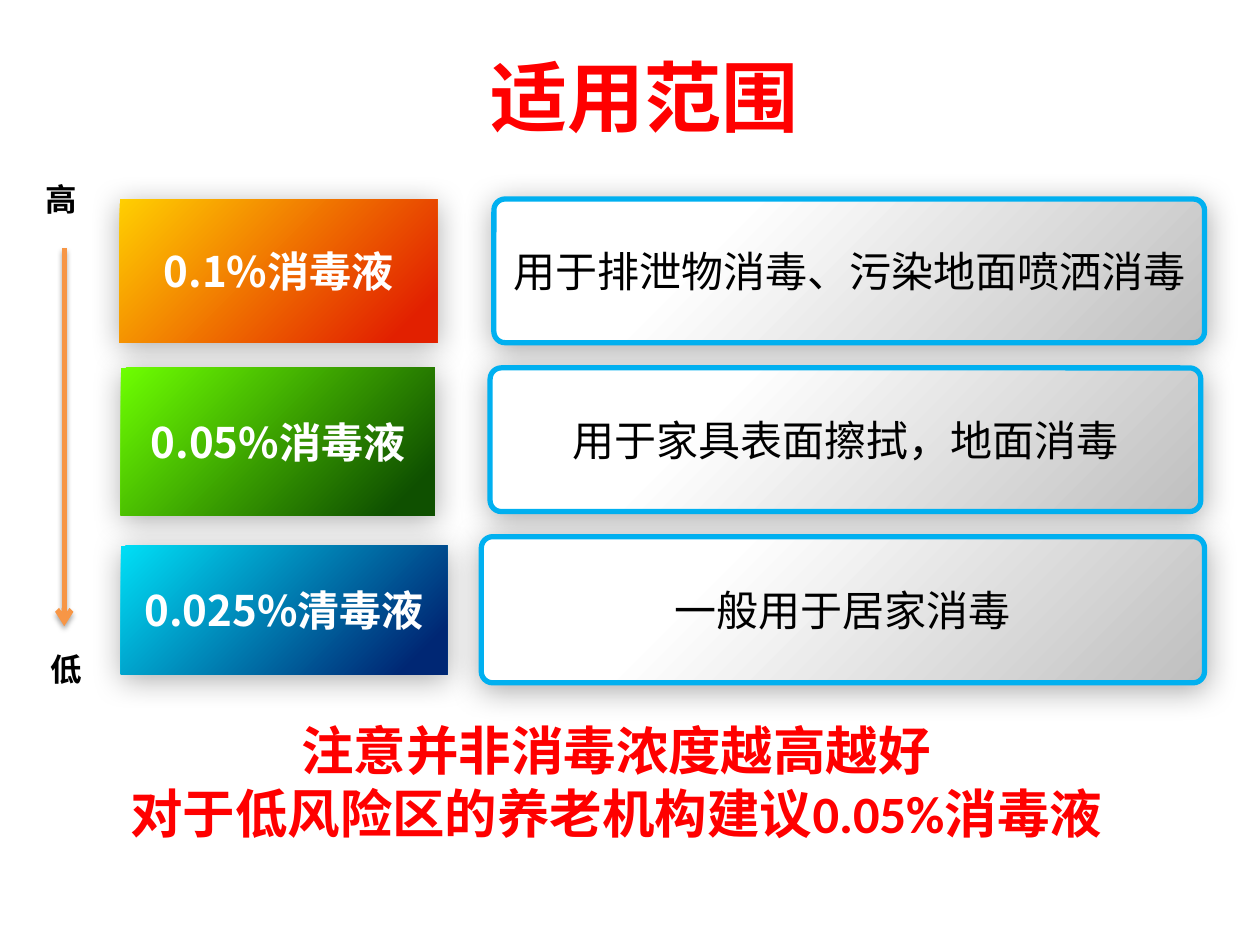
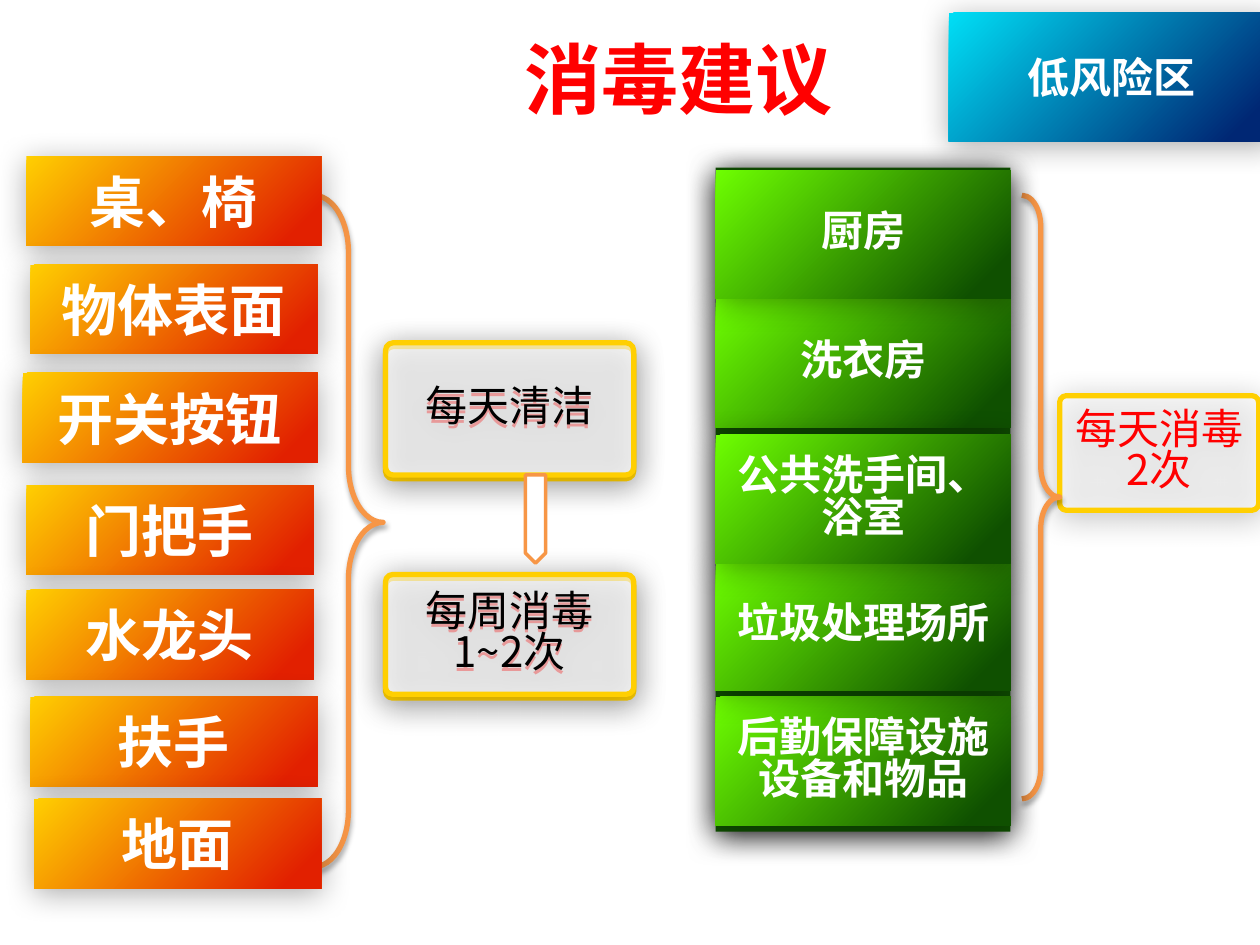
from lxml.etree import SubElement
from pptx import Presentation
from pptx.dml.color import RGBColor
from pptx.enum.shapes import MSO_CONNECTOR, MSO_SHAPE
from pptx.enum.text import MSO_ANCHOR, PP_ALIGN
from pptx.oxml.ns import qn
from pptx.util import Inches, Pt

CJK = "Noto Sans CJK SC"
RED, WHITE, BLACK = "FF0000", "FFFFFF", "000000"
ORANGE, BLUE, YELLOW = "F79646", "00B0F0", "FFCF01"
# Gradient stops: (position, colour)
FIRE = [(0, "FFCF01"), (0.9, "E22000")]
LEAF = [(0, "6EFF01"), (0.9, "0F5000")]
SEA = [(0, "00DFF6"), (0.9, "002774")]
SILVER = [(0.3, "FFFFFF"), (1, "BFBFBF")]
# Shadows: blur pt, distance pt, angle, opacity %
SOFT = (17.8, 3, 87, 33)
DEEP = (17.8, 3, 87, 85)
THIN = (3.1, 1.8, 90, 35)

# Solution, gradient, solution box, use, use box
STRENGTHS = [
    ("0.1%消毒液", FIRE, (0.95, 1.58, 2.52, 1.14),
     "用于排泄物消毒、污染地面喷洒消毒", (3.92, 1.58, 5.64, 1.14)),
    ("0.05%消毒液", LEAF, (0.96, 2.92, 2.49, 1.17),
     "用于家具表面擦拭，地面消毒", (3.89, 2.92, 5.64, 1.14)),
    ("0.025%清毒液", SEA, (0.96, 4.33, 2.59, 1.02),
     "一般用于居家消毒", (3.82, 4.26, 5.74, 1.16)),
]
SCALE_ENDS = [("高", 0.26, 1.38), ("低", 0.3, 5.11)]
ADVICE = ["注意并非消毒浓度越高越好", "对于低风险区的养老机构建议0.05%消毒液"]

# Surface, left, top, width
SURFACES = [
    ("桌、椅", 0.21, 1.24, 2.34),
    ("物体表面", 0.24, 2.1, 2.28),
    ("开关按钮", 0.18, 2.96, 2.34),
    ("门把手", 0.21, 3.85, 2.28),
    ("水龙头", 0.21, 4.68, 2.28),
    ("扶手", 0.24, 5.53, 2.28),
    ("地面", 0.27, 6.34, 2.28),
]
ROOMS = [
    ("后勤保障设施设备和物品", 5.53),
    ("垃圾处理场所", 4.46),
    ("洗衣房", 2.37),
    ("厨房", 1.35),
    ("公共洗手间、浴室", 3.45),
]
ROUTINES = [("每天清洁", 2.72, 1.05), ("每周消毒1~2次", 4.56, 0.95)]
ECHO_DROP = 0.03
# Box, adjustments
BRACES = [
    ((2.49, 1.55, 0.55, 5.33), (0.817, 0.513)),
    ((8.11, 1.55, 0.3, 4.79), (0.817, 0.5)),
]


def color(hex_code):
    return RGBColor.from_string(hex_code)


def inches(box):
    return [Inches(value) for value in box]


def write(holder, text, *, size=24, font=CJK, ink=BLACK, bold=False,
          align=PP_ALIGN.CENTER, anchor=MSO_ANCHOR.MIDDLE, spacing=None):
    """Fill a shape or text box with a line of text or a list of lines."""
    frame = holder.text_frame
    frame.word_wrap = True
    frame.vertical_anchor = anchor
    for index, line in enumerate([text] if isinstance(text, str) else text):
        paragraph = frame.add_paragraph() if index else frame.paragraphs[0]
        paragraph.alignment = align
        if spacing:
            paragraph.line_spacing = spacing
        run = paragraph.add_run()
        run.text = line
        run.font.size = Pt(size)
        run.font.name = font
        run.font.bold = bold
        run.font.color.rgb = color(ink)
        SubElement(run.font._element, qn("a:ea")).set("typeface", font)


def cast_shadow(effects, shadow):
    blur, distance, angle, opacity = shadow
    outer = SubElement(effects, qn("a:outerShdw"), blurRad=str(Pt(blur)),
                       dist=str(Pt(distance)), dir=str(angle * 60000),
                       algn="ctr", rotWithShape="0")
    shade = SubElement(outer, qn("a:srgbClr"), val=BLACK)
    SubElement(shade, qn("a:alpha"), val=str(opacity * 1000))


def add_block(slide, kind, box, *, fill=None, opacity=None, line=None,
              weight=3, shadow=None, adjust=(), rotation=0):
    """Add a preset shape; fill is a colour, a list of gradient stops or None."""
    block = slide.shapes.add_shape(kind, *inches(box))
    block.rotation = rotation
    for index, value in enumerate(adjust):
        block.adjustments[index] = value
    if fill is None:
        block.fill.background()
    elif isinstance(fill, str):
        block.fill.solid()
        block.fill.fore_color.rgb = color(fill)
        if opacity:
            tint = block._element.spPr.find(qn("a:solidFill"))[0]
            SubElement(tint, qn("a:alpha"), val=str(opacity * 1000))
    else:
        block.fill.gradient()
        block.fill.gradient_angle = 315
        for stop, (position, tone) in zip(block.fill.gradient_stops, fill):
            stop.position = position
            stop.color.rgb = color(tone)
    if line:
        block.line.color.rgb = color(line)
        block.line.width = Pt(weight)
    else:
        block.line.fill.background()
    block.shadow.inherit = False
    if shadow:
        cast_shadow(block._element.spPr.find(qn("a:effectLst")), shadow)
    return block


def add_label(slide, text, box, **text_format):
    write(slide.shapes.add_textbox(*inches(box)), text, **text_format)


def add_title(slide, text, box):
    add_label(slide, text, box, size=44, font="Calibri", ink=RED, bold=True)


def add_tile(slide, text, box, gradient, **text_format):
    tile = add_block(slide, MSO_SHAPE.RECTANGLE, box, fill=gradient, shadow=SOFT)
    write(tile, text, ink=WHITE, bold=True, **text_format)


def add_routine(slide, text, box, ink):
    card = add_block(slide, MSO_SHAPE.ROUNDED_RECTANGLE, box, fill=WHITE,
                     opacity=60, line=YELLOW, shadow=SOFT, adjust=[0.059])
    write(card, text, ink=ink, spacing=0.82)


def build_scope(slide):
    add_title(slide, "适用范围", (1.42, 0.3, 7.39, 0.92))
    for solution, gradient, solution_box, use, use_box in STRENGTHS:
        add_tile(slide, solution, solution_box, gradient)
        use_card = add_block(slide, MSO_SHAPE.ROUNDED_RECTANGLE, use_box,
                             fill=SILVER, line=BLUE, shadow=SOFT, adjust=[0.078])
        write(use_card, use)

    scale = slide.shapes.add_connector(
        MSO_CONNECTOR.STRAIGHT, *inches((0.51, 1.97, 0.51, 4.97)))
    scale.line.color.rgb = color(ORANGE)
    scale.line.width = Pt(3)
    SubElement(scale.line._get_or_add_ln(), qn("a:tailEnd"), type="arrow")
    cast_shadow(SubElement(scale._element.spPr, qn("a:effectLst")), THIN)
    for end, left, top in SCALE_ENDS:
        add_label(slide, end, (left, top, 0.5, 0.4), size=18, font="Arial",
                  bold=True, align=PP_ALIGN.LEFT, anchor=MSO_ANCHOR.TOP)
    add_label(slide, ADVICE, (0.09, 5.77, 9.6, 0.86), size=30, font="Calibri",
              ink=RED, bold=True)


def build_advice(slide):
    add_title(slide, "消毒建议", (1.29, -0.01, 8.2, 1.25))
    add_tile(slide, "低风险区", (7.53, 0.1, 2.58, 1.02), SEA)
    add_routine(slide, "每天消毒2次", (8.41, 3.14, 1.58, 0.91), RED)

    for drop, ink in [(ECHO_DROP, RED), (0, BLACK)]:
        for routine, top, height in ROUTINES:
            add_routine(slide, routine, (3.06, top + drop, 1.97, height), ink)
    add_block(slide, MSO_SHAPE.RIGHT_ARROW, (3.9, 4.04, 0.7, 0.16), fill=WHITE,
              line=ORANGE, weight=2, adjust=(1, 0.5), rotation=90)

    for box, bend in BRACES:
        add_block(slide, MSO_SHAPE.LEFT_BRACE, box, line=ORANGE, shadow=THIN,
                  adjust=bend, rotation=180)
    for surface, left, top, width in SURFACES:
        add_tile(slide, surface, (left, top, width, 0.71), FIRE, size=32)

    add_block(slide, MSO_SHAPE.RECTANGLE, (5.68, 1.33, 2.34, 5.27),
              fill="0F5000", shadow=DEEP)
    for room, top in ROOMS:
        add_tile(slide, room, (5.68, top, 2.34, 1.02), LEAF, spacing=0.82)


def main():
    deck = Presentation()
    deck.slide_width, deck.slide_height = Inches(10), Inches(7.5)
    for build in (build_scope, build_advice):
        build(deck.slides.add_slide(deck.slide_layouts[6]))
    deck.save("out.pptx")


if __name__ == "__main__":
    main()
